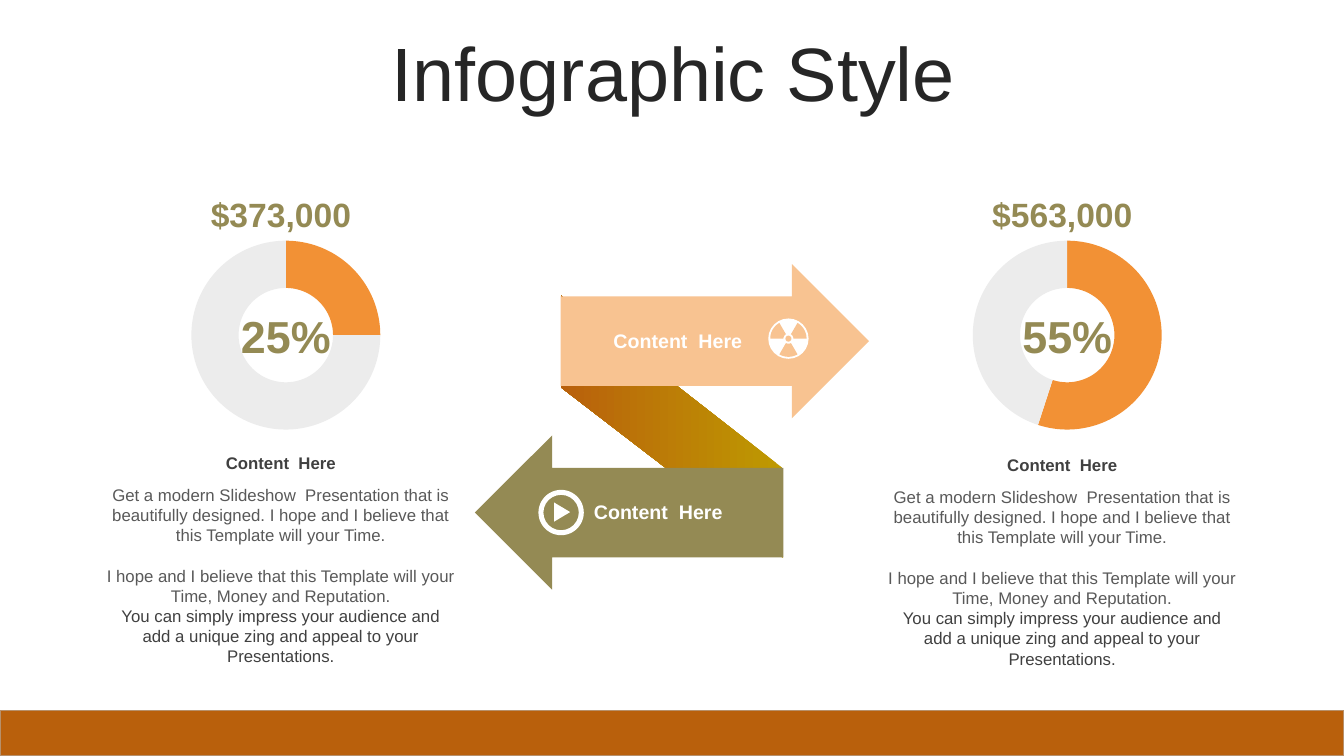
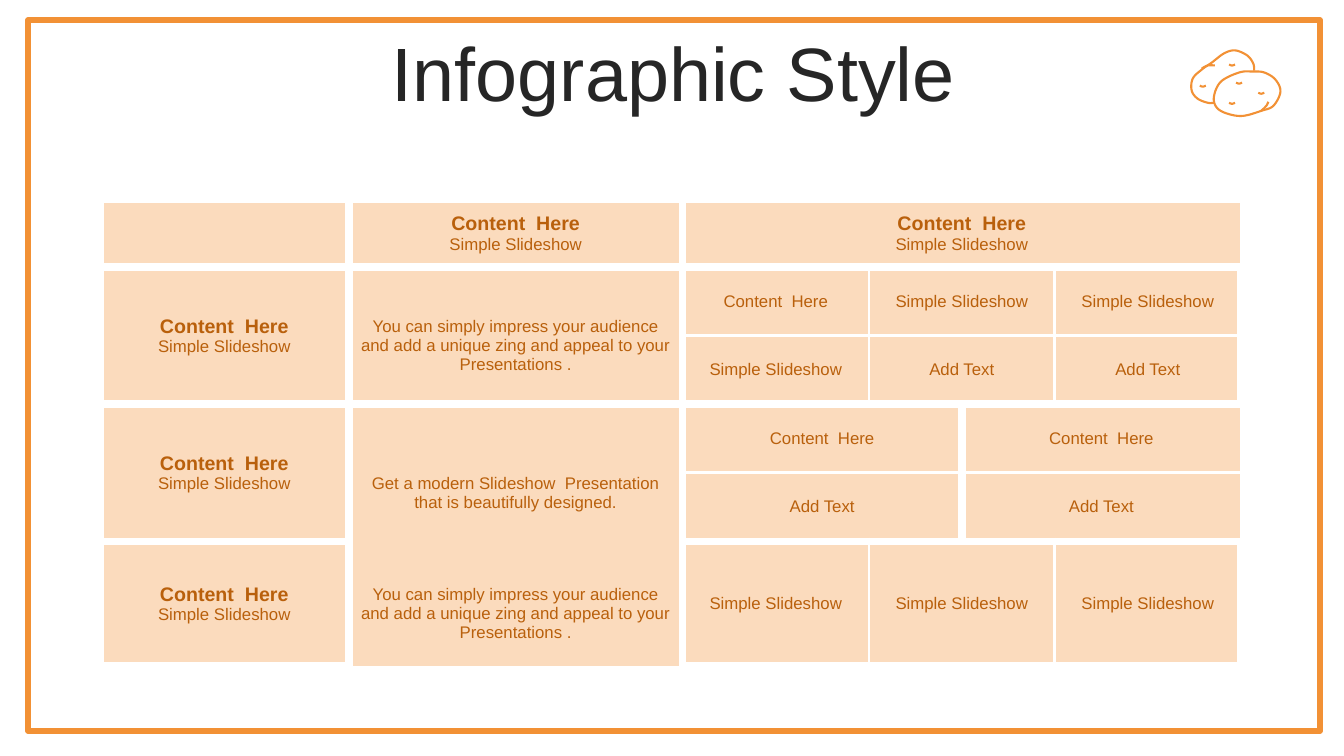
import math

from lxml import etree
from pptx import Presentation
from pptx.chart import data as cd
from pptx.dml import color as dml
from pptx.enum import chart as ec, shapes as es, text as et
from pptx.oxml import ns
from pptx.util import Inches, Pt

COLORS = {
    "title": "262626", "heading": "404040", "body": "595959", "white": "FFFFFF",
    "orange": "F29135", "peach": "F8C391", "cell": "FBDBBD", "brown": "B9600C",
    "gold": "BE9A01", "olive": "948A54", "rest": "ECECEC", "edge": "B7906B",
}
FONT = "Arial"
SHAPE = es.MSO_SHAPE
CENTER, LEFT, RIGHT = et.PP_ALIGN.CENTER, et.PP_ALIGN.LEFT, et.PP_ALIGN.RIGHT
MIDDLE, TOP = et.MSO_ANCHOR.MIDDLE, et.MSO_ANCHOR.TOP

GET_MODERN = "Get a modern Slideshow  Presentation that is beautifully designed."
IMPRESS = ("You can simply impress your audience and add a unique zing "
           "and appeal to your Presentations")


def rgb(name):
    return dml.RGBColor.from_string(COLORS[name])


def write(tf, lines, size=12, color="body", bold=False, align=CENTER, anchor=MIDDLE):
    """Fill a text frame; a line is a string or (string, format overrides)."""
    tf.word_wrap = True
    tf.vertical_anchor = anchor
    for i, line in enumerate(lines):
        words, own = (line, {}) if isinstance(line, str) else line
        p = tf.paragraphs[0] if i == 0 else tf.add_paragraph()
        p.alignment = align
        p.space_before = Pt(own.get("before", 0))
        r = p.add_run()
        r.text = words
        r.font.name = FONT
        r.font.size = Pt(own.get("size", size))
        r.font.bold = own.get("bold", bold)
        r.font.color.rgb = rgb(own.get("color", color))


def smooth(points, closed=False, steps=8):
    """Points of a Catmull-Rom curve through the given points."""
    n = len(points)

    def at(i):
        return points[i % n] if closed else points[min(max(i, 0), n - 1)]

    curve = [points[0]]
    for i in range(n if closed else n - 1):
        a, b, c, d = (at(i + k) for k in (-1, 0, 1, 2))
        for t in (k / steps for k in range(1, steps + 1)):
            curve.append(tuple(
                0.5 * (2 * q + (r - p) * t + (2 * p - 5 * q + 4 * r - s) * t ** 2
                       + (3 * q - p - 3 * r + s) * t ** 3)
                for p, q, r, s in zip(a, b, c, d)))
    return curve


def set_border(cell, widths):
    """Give cell sides (L, R, T, B) white lines; a width of 0 means no line."""
    tc_pr = cell._tc.get_or_add_tcPr()
    sides = [side for side in "LRTB" if side in widths]
    for i, side in enumerate(sides):
        ln = etree.Element(ns.qn("a:ln" + side), w=str(Pt(widths[side])))
        if widths[side]:
            fill = etree.SubElement(ln, ns.qn("a:solidFill"))
            etree.SubElement(fill, ns.qn("a:srgbClr"), val=COLORS["white"])
        else:
            etree.SubElement(ln, ns.qn("a:noFill"))
        tc_pr.insert(i, ln)


class Deck:
    def __init__(self):
        self.prs = Presentation()
        self.prs.slide_width, self.prs.slide_height = Inches(13.33), Inches(7.5)
        self.s = None

    def new_slide(self, title):
        self.s = self.prs.slides.add_slide(self.prs.slide_layouts[5])
        sp = self.s.shapes.title
        sp.left, sp.top, sp.width, sp.height = map(Inches, (0.35, 0.37, 12.66, 0.79))
        tf = sp.text_frame
        tf.auto_size = et.MSO_AUTO_SIZE.NONE
        write(tf, [title], size=54, color="title")
        tf.paragraphs[0].line_spacing = 0.9

    def paint(self, sp, fill=None, line=None, width=1):
        sp.shadow.inherit = False
        if fill:
            sp.fill.solid()
            sp.fill.fore_color.rgb = rgb(fill)
        else:
            sp.fill.background()
        if line:
            sp.line.color.rgb = rgb(line)
            sp.line.width = Pt(width)
        else:
            sp.line.fill.background()
        return sp

    def shape(self, kind, x, y, w, h, adjust=(), rotation=0, **style):
        sp = self.s.shapes.add_shape(kind, *map(Inches, (x, y, w, h)))
        for i, value in enumerate(adjust):
            sp.adjustments[i] = value
        sp.rotation = rotation
        return self.paint(sp, **style)

    def outline(self, points, closed=True, **style):
        start, *rest = [(Inches(x), Inches(y)) for x, y in points]
        builder = self.s.shapes.build_freeform(*start, scale=1.0)
        builder.add_line_segments(rest, close=closed)
        return self.paint(builder.convert_to_shape(), **style)

    def text(self, x, y, w, h, *lines, inset=0, **style):
        tf = self.s.shapes.add_textbox(*map(Inches, (x, y, w, h))).text_frame
        tf.margin_left = Inches(inset)
        write(tf, lines, **style)

    def doughnut(self, x, y, w, h, share):
        data = cd.CategoryChartData()
        data.categories = ["1", "2"]
        data.add_series("Series 1", (share, 100 - share))
        chart = self.s.shapes.add_chart(
            ec.XL_CHART_TYPE.DOUGHNUT, *map(Inches, (x, y, w, h)), data).chart
        chart.has_legend = chart.has_title = False
        chart.font.name, chart.font.size = FONT, Pt(18)
        plot = chart.plots[0]
        plot.vary_by_categories = True
        plot.has_data_labels = False
        for hole in chart._chartSpace.iter(ns.qn("c:holeSize")):
            hole.set("val", "80")
        for i, color in enumerate(("orange", "rest")):
            fmt = plot.series[0].points[i].format
            fmt.fill.solid()
            fmt.fill.fore_color.rgb = rgb(color)
            fmt.line.fill.background()

    def table(self, x, y, widths, heights):
        table = self.s.shapes.add_table(
            len(heights), len(widths), *map(Inches, (x, y, sum(widths), sum(heights)))).table
        for col, width in zip(table.columns, widths):
            col.width = Inches(width)
        for row, height in zip(table.rows, heights):
            row.height = Inches(height)
        return table

    def cell(self, table, row, col, rows, cols, lines, edges, drop=0):
        """Merge, fill and edge a block of cells; drop pushes its text down."""
        origin = table.cell(row, col)
        last_row, last_col = row + rows - 1, col + cols - 1
        if rows * cols > 1:
            origin.merge(table.cell(last_row, last_col))
        for r in range(row, last_row + 1):
            for c in range(col, last_col + 1):
                part = table.cell(r, c)
                part.fill.solid()
                part.fill.fore_color.rgb = rgb("cell")
                outer = {"L": c == col, "R": c == last_col,
                         "T": r == row, "B": r == last_row}
                set_border(part, {k: edges[k] for k in edges if outer[k]})
        write(origin.text_frame, lines, color="brown")
        origin.vertical_anchor = MIDDLE
        origin.margin_top = Inches(0.05 + drop)


def radiation_icon(deck, cx, cy):
    def dot(radius, fill):
        deck.shape(SHAPE.OVAL, cx - radius, cy - radius, 2 * radius, 2 * radius, fill=fill)

    dot(0.2, "white")
    for start in (60, 180, 300):
        arc = [math.radians(start + 5 * k) for k in range(13)]
        ring = [(0.18, a) for a in arc] + [(0.05, a) for a in reversed(arc)]
        deck.outline([(cx + r * math.cos(a), cy + r * math.sin(a)) for r, a in ring],
                     fill="peach")
    dot(0.03, "peach")


def play_icon(deck, x, y):
    deck.shape(SHAPE.DONUT, x, y, 0.45, 0.45, adjust=[0.11], fill="white")
    deck.shape(SHAPE.ISOSCELES_TRIANGLE, x + 0.14, y + 0.14, 0.19, 0.16,
               rotation=90, fill="white")


def potato_icon(deck):
    pen = dict(line="orange", width=1.5)
    front = [(12.54, 0.72), (12.65, 0.79), (12.7, 0.91), (12.63, 1.05), (12.51, 1.1),
             (12.33, 1.15), (12.18, 1.13), (12.07, 1.07), (12.04, 0.96), (12.11, 0.81),
             (12.29, 0.72), (12.42, 0.71)]
    back = [(12.04, 1.02), (11.98, 1.02), (11.88, 0.98), (11.82, 0.9), (11.83, 0.78),
            (11.92, 0.69), (12.02, 0.62), (12.14, 0.53), (12.25, 0.5), (12.37, 0.55),
            (12.43, 0.63), (12.44, 0.7)]
    folds = [[(11.92, 0.68), (11.98, 0.65), (12.05, 0.65)],
             [(12.51, 1.1), (12.56, 1.05), (12.58, 1.01)]]
    deck.outline(smooth(front, closed=True), **pen)
    for curve in [back] + folds:
        deck.outline(smooth(curve), closed=False, **pen)
    for x, y in [(12.26, 0.82), (12.48, 0.92), (12.19, 1.02), (11.9, 0.85), (12.19, 0.64)]:
        deck.outline(smooth([(x, y), (x + 0.03, y + 0.01), (x + 0.06, y)]),
                     closed=False, **pen)


def side_panel(deck, x, amount, share, text_top):
    deck.text(x, text_top, 3.57, 0.3, "Content  Here", color="heading", bold=True)
    deck.text(x, text_top + 0.32, 3.57, 1.72,
              GET_MODERN + " I hope and I believe that this Template will your Time.",
              ("I hope and I believe that this Template will your Time, Money and Reputation.",
               {"before": 14.5}),
              (IMPRESS + ".", {"color": "heading"}), anchor=TOP)
    deck.doughnut(x + 0.69, 2.25, 2.19, 2.15, share)
    deck.text(x + 1.16, 3.01, 1.25, 0.64, f"{share}%", inset=0.1,
              size=32, color="olive", bold=True)
    deck.text(x + 0.44, 1.87, 2.69, 0.5, amount, size=24, color="olive", bold=True)


def arrows_slide(deck):
    deck.new_slide("Infographic Style")
    ribbon = deck.outline([(5.56, 2.93), (7.77, 4.65), (7.77, 5.54), (5.56, 3.84)],
                          fill="brown")
    ribbon.fill.gradient()
    ribbon.fill.gradient_angle = 180
    for stop, position, color in zip(ribbon.fill.gradient_stops, (0, 1), ("gold", "brown")):
        stop.position = position
        stop.color.rgb = rgb(color)
    arrow = dict(adjust=(0.58, 0.5))
    deck.shape(SHAPE.RIGHT_ARROW, 5.56, 2.62, 3.06, 1.53, fill="peach", **arrow)
    deck.shape(SHAPE.RIGHT_ARROW, 4.71, 4.32, 3.06, 1.53, fill="olive", rotation=180, **arrow)
    label = dict(size=14, color="white", bold=True)
    deck.text(5.74, 3.21, 1.72, 0.34, "Content  Here", align=RIGHT, **label)
    deck.text(5.89, 4.91, 1.72, 0.34, "Content  Here", align=LEFT, **label)
    side_panel(deck, 8.8, "$563,000", 55, 4.46)
    side_panel(deck, 1.05, "$373,000", 25, 4.44)
    radiation_icon(deck, 7.82, 3.36)
    play_icon(deck, 5.34, 4.86)
    deck.shape(SHAPE.RECTANGLE, 0, 7.05, 13.33, 0.45, fill="brown", line="edge")


def table_slide(deck):
    deck.new_slide("Infographic Style")
    table = deck.table(0.99, 1.98, (2.47, 3.31, 1.85, 0.92, 0.92, 1.85),
                       (0.67, 0.68, 0.68, 0.68, 0.68, 1.24))
    thick, thin = 6, 2.25
    frame = dict.fromkeys("LRTB", thick)
    here, simple, add = "Content  Here", "Simple Slideshow", "Add Text"
    heading = [(here, {"size": 14, "bold": True}), simple]

    deck.cell(table, 0, 0, 1, 1, [], frame)
    deck.cell(table, 0, 1, 1, 1, heading, frame)
    deck.cell(table, 0, 2, 1, 4, heading, frame)
    for row, rows in ((1, 2), (3, 2), (5, 1)):
        deck.cell(table, row, 0, rows, 1, heading, frame)
    for row, rows, words, drop in ((1, 2, IMPRESS + " .", 0.2), (3, 2, GET_MODERN, 0.4),
                                   (5, 1, IMPRESS + " .", 0.2)):
        edges = dict(frame, T=thick if row == 1 else 0, B=0)
        deck.cell(table, row, 1, rows, 1, [words], edges, drop)

    thirds, halves = ((2, 1), (3, 2), (5, 1)), ((2, 2), (4, 2))
    for row, spans, labels in ((1, thirds, (here, simple, simple)),
                               (2, thirds, (simple, add, add)),
                               (3, halves, (here, here)),
                               (4, halves, (add, add)),
                               (5, thirds, (simple,) * 3)):
        for (col, cols), words in zip(spans, labels):
            edges = {"L": thick if col == 2 else thin,
                     "R": thick if col + cols == 6 else thin,
                     "T": thin if row in (2, 4) else thick,
                     "B": thin if row in (1, 3) else thick}
            deck.cell(table, row, col, 1, cols, [words], edges)

    potato_icon(deck)
    deck.shape(SHAPE.RECTANGLE, 0.28, 0.2, 12.81, 7.05, line="orange", width=4.5)


def main():
    deck = Deck()
    arrows_slide(deck)
    table_slide(deck)
    deck.prs.save("out.pptx")


if __name__ == "__main__":
    main()
